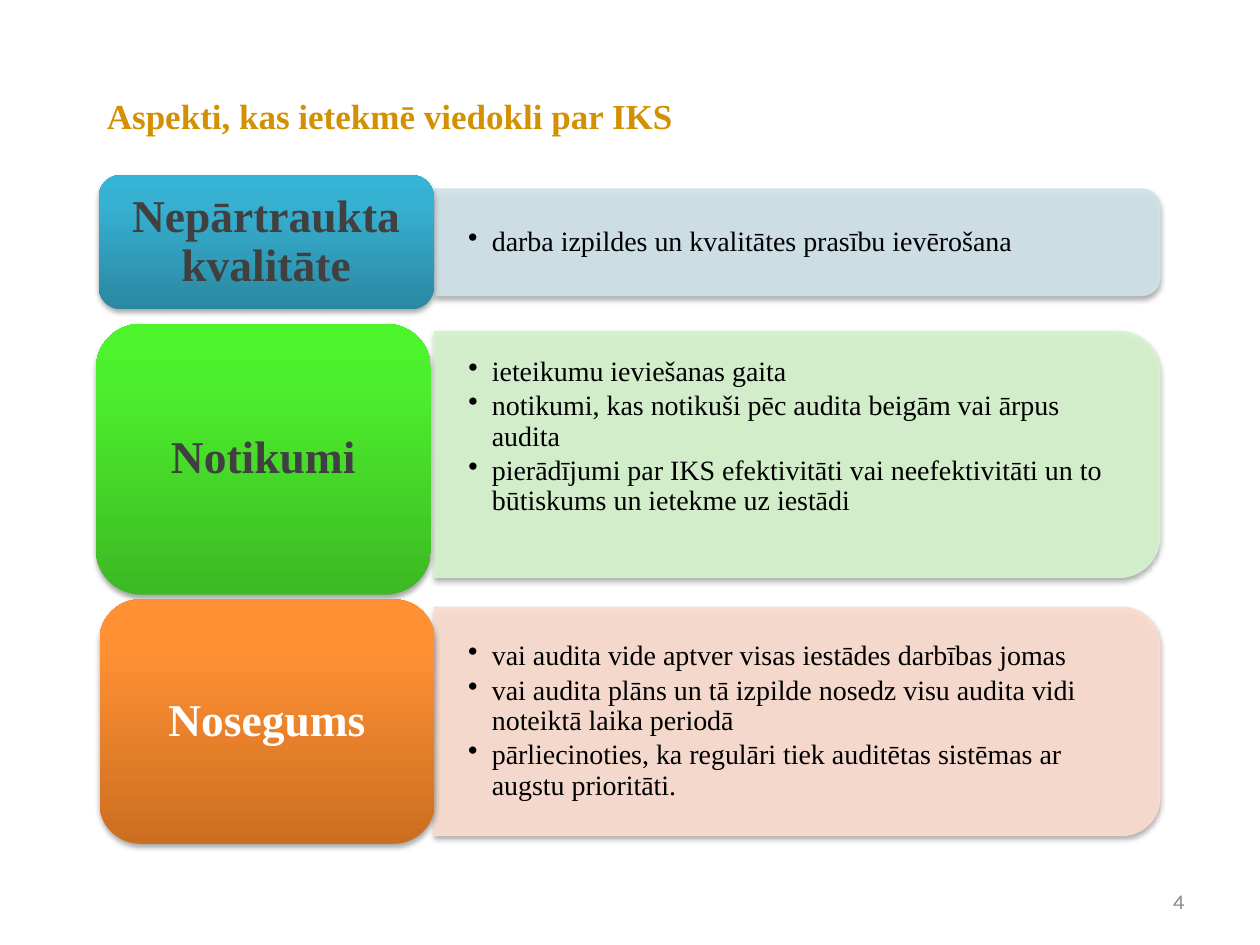
from lxml import etree
from pptx import Presentation
from pptx.dml.color import RGBColor
from pptx.enum import shapes, text
from pptx.oxml import parse_xml
from pptx.oxml.ns import nsdecls, qn
from pptx.util import Pt

SERIF = "Times New Roman"
TILE_WIDTH = 191.5
PANEL_LEFT, PANEL_WIDTH = 248.4, 414.4
CORNER_INSET = 0.0488  # text inset of a rounded corner, as a share of height


def color(hex_code):
    return RGBColor.from_string(hex_code)


def write(frame, lines, *, size, ink, font=SERIF, bold=False, align=text.PP_ALIGN.LEFT,
          anchor=text.MSO_ANCHOR.MIDDLE, insets=(7.2, 3.6, 7.2, 3.6),
          spacing=1.0, after=0, bullet_indent=0):
    frame.word_wrap = True
    frame.vertical_anchor = anchor
    (frame.margin_left, frame.margin_top,
     frame.margin_right, frame.margin_bottom) = map(Pt, insets)
    for index, line in enumerate(lines):
        paragraph = frame.add_paragraph() if index else frame.paragraphs[0]
        paragraph.alignment = align
        paragraph.line_spacing = spacing
        paragraph.space_after = Pt(after)
        if bullet_indent:
            props = paragraph._p.get_or_add_pPr()
            props.set("marL", str(Pt(bullet_indent)))
            props.set("indent", str(-Pt(bullet_indent)))
            etree.SubElement(props, qn("a:buChar")).set("char", "•")
        run = paragraph.add_run()
        run.text = line
        run.font.name, run.font.size, run.font.bold = font, Pt(size), bold
        run.font.color.rgb = color(ink)


def add_text(slide, box, lines, **style):
    textbox = slide.shapes.add_textbox(*map(Pt, box))
    write(textbox.text_frame, lines, **style)


def add_shadow(shape):
    shape.shadow.inherit = False
    effects = shape._element.spPr.find(qn("a:effectLst"))
    effects.append(parse_xml(
        f'<a:outerShdw {nsdecls("a")} blurRad="{Pt(3.1)}" dist="{Pt(1.8)}" '
        'dir="5400000" rotWithShape="0"><a:srgbClr val="000000">'
        '<a:alpha val="35000"/></a:srgbClr></a:outerShdw>'))


def fill_gradient(shape, dark, middle, light):
    """Run from dark at the bottom to light at the top."""
    stops = "".join(
        f'<a:gs pos="{position}"><a:srgbClr val="{shade}"/></a:gs>'
        for position, shade in ((0, dark), (80000, middle), (100000, light)))
    geometry = shape._element.spPr.find(qn("a:prstGeom"))
    geometry.addnext(parse_xml(
        f'<a:gradFill {nsdecls("a")} rotWithShape="1"><a:gsLst>{stops}</a:gsLst>'
        '<a:lin ang="16200000" scaled="0"/></a:gradFill>'))


def add_panel(slide, box, tint, points, lift):
    """Draw the pale panel, rounded on the right, with its bullet points."""
    left, top, width, height = box
    # The preset is rounded on top, so it is turned a quarter about its centre
    turned = (left + (width - height) / 2, top + (height - width) / 2, height, width)
    panel = slide.shapes.add_shape(
        shapes.MSO_SHAPE.ROUND_2_SAME_RECTANGLE, *map(Pt, turned))
    panel.rotation = 90
    for paint in (panel.fill, panel.line.fill):
        paint.solid()
        paint.fore_color.rgb = color(tint)
    panel.line.width = Pt(0.75)
    for shade in panel._element.spPr.iter(qn("a:srgbClr")):
        etree.SubElement(shade, qn("a:alpha")).set("val", "90000")
    add_shadow(panel)
    add_text(slide, (left, top, width - CORNER_INSET * height, height), points,
             size=16, ink="000000", insets=(19.2, 9.6, 19.2, 9.6 + lift),
             spacing=0.9, after=2.4, bullet_indent=13.5)


def add_tile(slide, box, shades, heading, ink):
    tile = slide.shapes.add_shape(shapes.MSO_SHAPE.ROUNDED_RECTANGLE, *map(Pt, box))
    fill_gradient(tile, *shades)
    tile.line.fill.background()
    add_shadow(tile)
    write(tile.text_frame, [heading], size=26, ink=ink, bold=True,
          align=text.PP_ALIGN.CENTER, insets=(7.8, 3.9, 7.8, 3.9), spacing=0.9)


def add_aspect(slide, aspect):
    panel_top, panel_height = aspect["panel"]
    add_panel(slide, (PANEL_LEFT, panel_top, PANEL_WIDTH, panel_height),
              aspect["tint"], aspect["points"], aspect.get("lift", 0))
    tile_left, tile_top, tile_height = aspect["tile"]
    add_tile(slide, (tile_left, tile_top, TILE_WIDTH, tile_height),
             aspect["shades"], aspect["heading"], aspect["ink"])


ASPECTS = [
    dict(heading="Nepārtraukta kvalitāte", ink="404040",
         tile=(56.4, 100, 76.8), shades=("2A88A2", "37B1D2", "34B4D6"),
         panel=(108, 60.8), tint="D0E3EA",
         points=["darba izpildes un kvalitātes prasību ievērošana"]),
    dict(heading="Notikumi", ink="404040",
         tile=(54.8, 185, 154.8), shades=("3CB923", "4EF02E", "4CF52A"),
         panel=(189.4, 140.6), tint="D6F4CE", lift=20,
         points=["ieteikumu ieviešanas gaita",
                 "notikumi, kas notikuši pēc audita beigām vai ārpus audita",
                 "pierādījumi par IKS efektivitāti vai neefektivitāti un to "
                 "būtiskums un ietekme uz iestādi"]),
    dict(heading="Nosegums", ink="FFFFFF",
         tile=(56.9, 342.5, 139.7), shades=("CC6E20", "FF9034", "FF9136"),
         panel=(347, 130.5), tint="FCDDCF",
         points=["vai audita vide aptver visas iestādes darbības jomas",
                 "vai audita plāns un tā izpilde nosedz visu audita vidi "
                 "noteiktā laika periodā",
                 "pārliecinoties, ka regulāri tiek auditētas sistēmas ar "
                 "augstu prioritāti."]),
]


def main():
    deck = Presentation()
    deck.slide_width, deck.slide_height = Pt(720), Pt(540)
    slide = deck.slides.add_slide(deck.slide_layouts[6])

    # Aspect rows
    for aspect in ASPECTS:
        add_aspect(slide, aspect)

    # Title and page number
    add_text(slide, (54, 49, 448, 34), ["Aspekti, kas ietekmē viedokli par IKS"],
             size=20, ink="D39001", bold=True)
    add_text(slide, (516, 500.4, 168, 28.8), ["4"], size=12, ink="8C8C8C",
             font="Karla", align=text.PP_ALIGN.RIGHT)

    deck.save("out.pptx")


if __name__ == "__main__":
    main()
